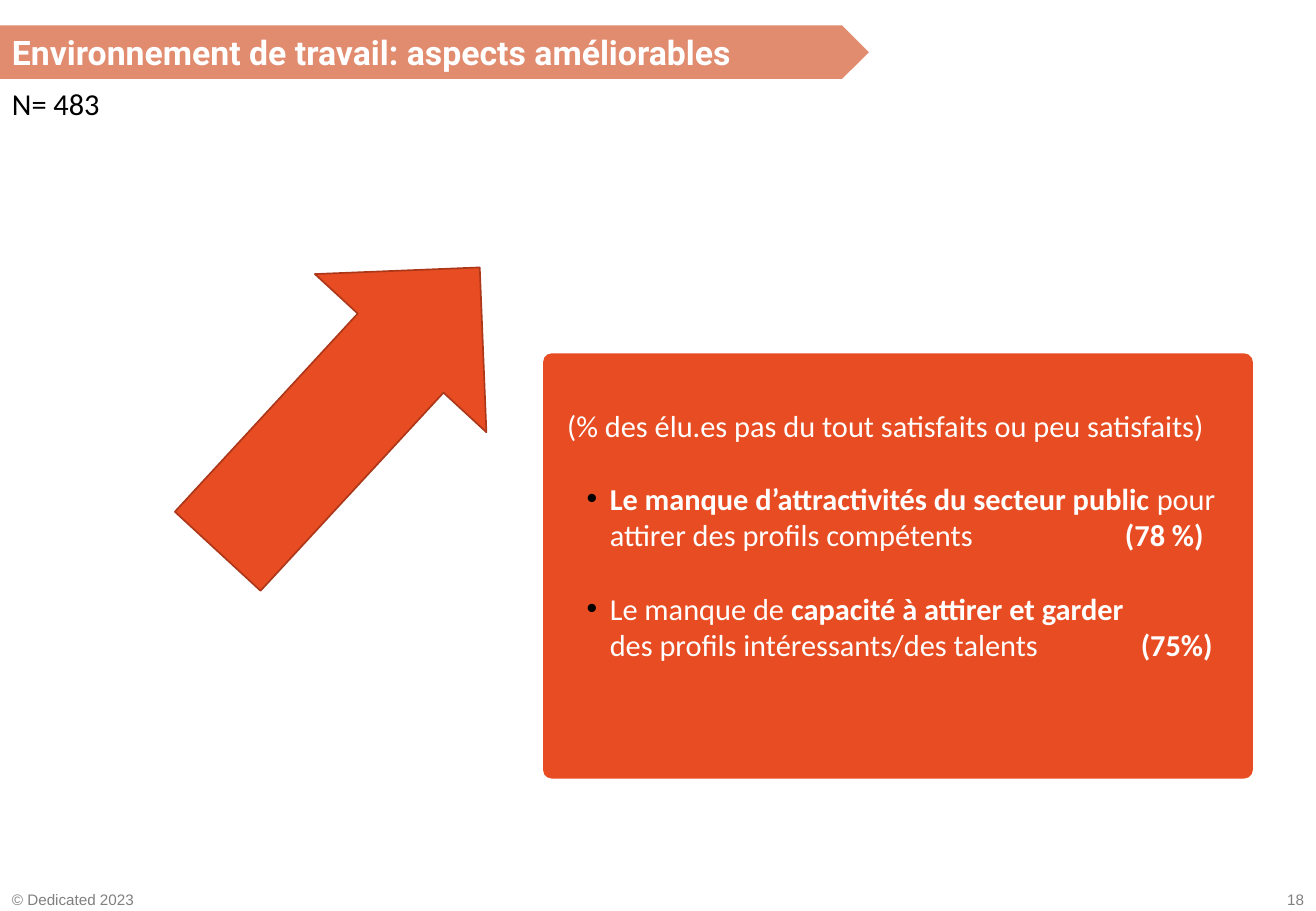
from lxml import etree
from pptx import Presentation
from pptx import util as u
from pptx.dml.color import RGBColor
from pptx.enum import shapes, text
from pptx.oxml.ns import qn

COLORS = {"banner": "E18B6F", "accent": "E84C22", "outline": "AC3819",
          "white": "FFFFFF", "black": "000000", "grey": "808080"}
BULLETS = [
    (4.43, [("Le manque d’attractivités du secteur public ", True),
            ("pour attirer des profils compétents\t", False), ("(78 %)", True)]),
    (4.56, [("Le manque de ", False), ("capacité à attirer et garder", True),
            ("\vdes profils intéressants/des talents\t", False), ("(75%)", True)]),
]


def rgb(name):
    """Return the named colour."""
    return RGBColor.from_string(COLORS[name])


def style_run(run, size, color, font="Calibri", bold=False):
    """Format one run."""
    run.font.size, run.font.name, run.font.bold = u.Pt(size), font, bold
    run.font.color.rgb = rgb(color)


def add_block(slide, kind, box, fill, line=None):
    """Add a filled preset shape without shadow."""
    shape = slide.shapes.add_shape(kind, *map(u.Inches, box))
    shape.shadow.inherit = False
    shape.fill.solid()
    shape.fill.fore_color.rgb = rgb(fill)
    if line:
        shape.line.color.rgb, shape.line.width = rgb(line), u.Pt(1)
    else:
        shape.line.fill.background()
    return shape


def add_label(slide, box, words, size, color, font="Calibri", align=text.PP_ALIGN.LEFT):
    """Add a one-line text box."""
    label = slide.shapes.add_textbox(*map(u.Inches, box))
    label.text_frame.word_wrap = True
    label.text_frame.text = words
    paragraph = label.text_frame.paragraphs[0]
    paragraph.alignment = align
    style_run(paragraph.runs[0], size, color, font)


def add_heading(slide, left, top):
    """Add the title banner and the sample size beneath it."""
    banner = add_block(slide, shapes.MSO_SHAPE.PENTAGON, (left, top, 7.15, 0.44), "banner")
    banner.text_frame.text = "Environnement de travail: aspects améliorables"
    paragraph = banner.text_frame.paragraphs[0]
    paragraph.alignment = text.PP_ALIGN.LEFT
    style_run(paragraph.runs[0], 20, "white", "Roboto", True)
    add_label(slide, (left, top + 0.44, 1.82, 0.4), "N= 483", 18, "black")


def add_bullet_format(paragraph, tab):
    """Give a paragraph a black bullet, a hanging indent and a tab stop."""
    properties = paragraph._p.get_or_add_pPr()
    properties.set("marL", str(u.Inches(0.19)))
    properties.set("indent", str(u.Inches(-0.19)))
    color = etree.SubElement(properties, qn("a:buClr"))
    etree.SubElement(color, qn("a:srgbClr"), val=COLORS["black"])
    etree.SubElement(properties, qn("a:buFont"), typeface="Arial")
    etree.SubElement(properties, qn("a:buChar"), char="•")
    tabs = etree.SubElement(properties, qn("a:tabLst"))
    etree.SubElement(tabs, qn("a:tab"), pos=str(u.Inches(tab)), algn="l")


def add_findings(slide, left, top):
    """Add the panel with its caption and bulleted findings."""
    panel = add_block(slide, shapes.MSO_SHAPE.ROUNDED_RECTANGLE, (left, top, 5.84, 3.5), "accent")
    panel.adjustments[0] = 0.02
    add_label(slide, (left + 0.1, top + 0.39, 5.63, 0.4),
              "(% des élu.es pas du tout satisfaits ou peu satisfaits)", 18, "white")
    body = slide.shapes.add_textbox(*map(u.Inches, (left + 0.26, top + 0.99, 5.63, 1.8)))
    frame = body.text_frame
    frame.word_wrap = True
    for index, (tab, parts) in enumerate(BULLETS):
        paragraph = frame.add_paragraph() if index else frame.paragraphs[0]
        add_bullet_format(paragraph, tab)
        if index:
            paragraph.space_before = u.Pt(22)
        for words, bold in parts:
            if words.startswith("\v"):
                paragraph.add_line_break()
            run = paragraph.add_run()
            run.text = words.lstrip("\v")
            style_run(run, 18, "white", bold=bold)


def add_footer(slide, top, width):
    """Add the copyright line and the page number."""
    add_label(slide, (0, top, 1.28, 0.25), "© Dedicated 2023", 9, "grey", "Arial")
    add_label(slide, (width - 0.67, top, 0.67, 0.25), "18", 9, "grey", "Arial",
              text.PP_ALIGN.RIGHT)


def main():
    """Build and save the slide."""
    presentation = Presentation()
    presentation.slide_width, presentation.slide_height = u.Inches(10.83), u.Inches(7.5)
    slide = presentation.slides.add_slide(presentation.slide_layouts[6])
    add_footer(slide, 7.28, 10.83)
    add_heading(slide, 0, 0.21)
    add_findings(slide, 4.47, 2.91)
    arrow = add_block(slide, shapes.MSO_SHAPE.RIGHT_ARROW, (1.28, 2.41, 3.18, 1.92),
                      "accent", "outline")
    arrow.rotation = 312.7
    presentation.save("out.pptx")


if __name__ == "__main__":
    main()
